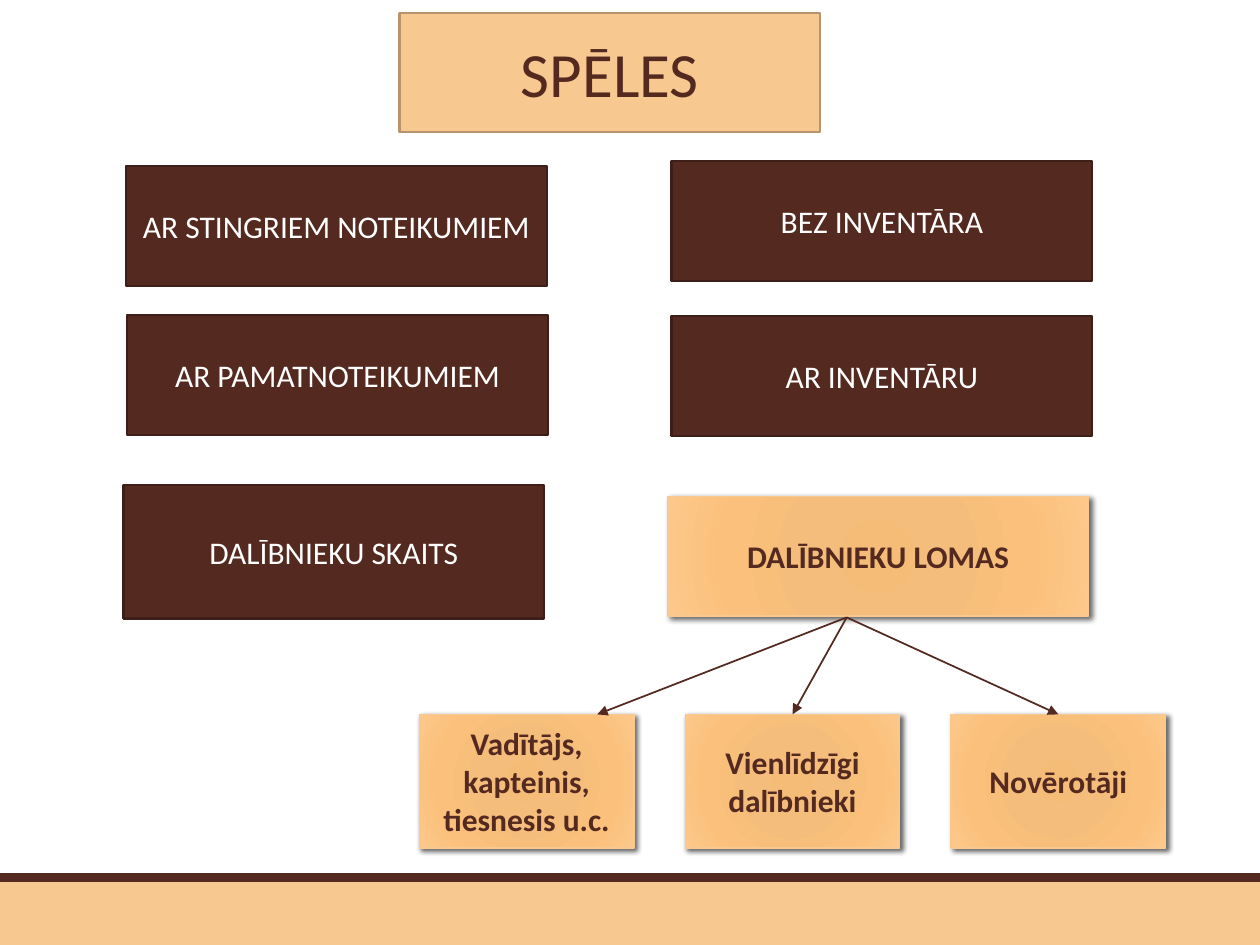
import pptx
import pptx.dml.color
import pptx.enum.shapes
import pptx.enum.text
import pptx.oxml
import pptx.oxml.ns
import pptx.util
from dataclasses import dataclass

EMU_PER_PX = 9144  # 100 px to the inch


@dataclass(frozen=True)
class Theme:
    font: str = "Calibri"
    title_size: int = 36
    body_size: int = 18
    sand: str = "F7C890"
    sand_edge: str = "B7946B"
    brown: str = "542920"
    brown_edge: str = "3E1E18"
    white: str = "FFFFFF"
    glow: tuple = ((0, "F5BC78"), (34, "F5BD7B"), (70, "FBC07B"), (100, "FCC88B"))


THEME = Theme()
TITLE_STYLE = {"fill": THEME.sand, "edge": THEME.sand_edge, "width": 1.25,
               "color": THEME.brown, "size": THEME.title_size, "bold": False}
TYPE_STYLE = {"fill": THEME.brown, "edge": THEME.brown_edge, "width": 1.25,
              "color": THEME.white, "size": THEME.body_size, "bold": False}
ROLE_STYLE = {"fill": THEME.glow, "edge": THEME.sand, "width": 1,
              "color": THEME.brown, "size": THEME.body_size, "bold": True}


def px(length):
    return pptx.util.Emu(length * EMU_PER_PX)


def rgb(value):
    return pptx.dml.color.RGBColor.from_string(value)


def set_attributes(target, values):
    for name, value in values.items():
        setattr(target, name, value)


def drawing_xml(tag, body, attributes=""):
    namespaces = pptx.oxml.ns.nsdecls("a")
    return pptx.oxml.parse_xml(f"<a:{tag} {namespaces} {attributes}>{body}</a:{tag}>")


def fill_solid(shape, color):
    shape.fill.solid()
    shape.fill.fore_color.rgb = rgb(color)


def fill_glow(shape, stops):
    """Give the shape a radial gradient and a soft shadow."""
    stop_xml = "".join(f'<a:gs pos="{position * 1000}"><a:srgbClr val="{color}"/></a:gs>'
                       for position, color in stops)
    gradient = drawing_xml("gradFill", f'<a:gsLst>{stop_xml}</a:gsLst><a:path path="circle">'
                           '<a:fillToRect l="100000" t="100000" r="100000" b="100000"/></a:path>',
                           'rotWithShape="1"')
    shadow = drawing_xml("outerShdw", '<a:srgbClr val="000000"><a:alpha val="60000"/></a:srgbClr>',
                         'blurRad="38100" dist="25400" dir="2700000" rotWithShape="0"')
    shape.fill.background()
    properties = shape.element.spPr
    properties.replace(properties.find(pptx.oxml.ns.qn("a:noFill")), gradient)
    properties.find(pptx.oxml.ns.qn("a:effectLst")).append(shadow)


def add_rectangle(slide, box):
    shape = slide.shapes.add_shape(pptx.enum.shapes.MSO_SHAPE.RECTANGLE, *map(px, box))
    shape.shadow.inherit = False
    return shape


def style_box(shape, text, style):
    """Fill, outline and label one box."""
    if isinstance(style["fill"], str):
        fill_solid(shape, style["fill"])
    else:
        fill_glow(shape, style["fill"])
    shape.line.color.rgb = rgb(style["edge"])
    shape.line.width = pptx.util.Pt(style["width"])
    frame = shape.text_frame
    set_attributes(frame, {"text": text, "word_wrap": True,
                           "auto_size": pptx.enum.text.MSO_AUTO_SIZE.NONE,
                           "vertical_anchor": pptx.enum.text.MSO_ANCHOR.MIDDLE})
    paragraph = frame.paragraphs[0]
    paragraph.alignment = pptx.enum.text.PP_ALIGN.CENTER
    set_attributes(paragraph.font, {"name": THEME.font, "bold": style["bold"],
                                    "size": pptx.util.Pt(style["size"])})
    paragraph.font.color.rgb = rgb(style["color"])


def add_arrow(slide, start, end):
    arrow = slide.shapes.add_connector(pptx.enum.shapes.MSO_CONNECTOR.STRAIGHT,
                                       *map(px, start + end))
    arrow.line.color.rgb = rgb(THEME.brown)
    arrow.line.width = pptx.util.Pt(1)
    arrow.line._get_or_add_ln().append(drawing_xml("tailEnd", "", 'type="triangle"'))
    arrow._element.spPr.append(drawing_xml("effectLst", ""))


def add_footer(slide, box):
    """Sand band with a thin brown rule along its top."""
    left, top, width, height = box
    rule = 7
    for part, color in (((left, top + rule, width, height - rule), THEME.sand),
                        ((left, top, width, rule), THEME.brown)):
        band = add_rectangle(slide, part)
        fill_solid(band, color)
        band.line.fill.background()


def place_title(slide, box, text):
    title = slide.shapes.title
    set_attributes(title, dict(zip(("left", "top", "width", "height"), map(px, box))))
    style_box(title, text, TITLE_STYLE)


def add_game_types(slide, box, entries):
    """Brown boxes, each offset from the corner of the region."""
    left, top, width = box
    for text, across, down, height in entries:
        shape = add_rectangle(slide, (left + across, top + down, width, height))
        style_box(shape, text, TYPE_STYLE)


def add_role_tree(slide, box, heading, roles):
    """A heading box with arrows to a row of evenly spaced roles."""
    left, top, width, height = box
    role_width, role_height = 170, 106
    step = (width - role_width) // (len(roles) - 1)
    role_top = top + height - role_height
    style_box(add_rectangle(slide, (left + 197, top, 334, 95)), heading, ROLE_STYLE)
    role_lefts = [left + index * step for index in range(len(roles))]
    for role_left, role in zip(role_lefts, roles):
        shape = add_rectangle(slide, (role_left, role_top, role_width, role_height))
        style_box(shape, role, ROLE_STYLE)
    # The first arrow lands right of the middle of its box
    for role_left, landing in zip(role_lefts, (141, 85, 85)):
        add_arrow(slide, (left + 339, top + 96), (role_left + landing, role_top))


def main():
    presentation = pptx.Presentation()
    set_attributes(presentation, {"slide_width": px(1000), "slide_height": px(750)})
    slide = presentation.slides.add_slide(presentation.slide_layouts.get_by_name("Title Only"))

    add_footer(slide, (0, 693, 1000, 57))
    place_title(slide, (317, 10, 334, 95), "SPĒLES")
    # Left column: rules and number of players
    add_game_types(slide, (98, 132, 334), (
        ("AR STINGRIEM NOTEIKUMIEM", 2, 0, 95),
        ("AR PAMATNOTEIKUMIEM", 3, 118, 95),
        ("DALĪBNIEKU SKAITS", 0, 253, 106)))
    # Right column: equipment
    add_game_types(slide, (533, 128, 334), (
        ("BEZ INVENTĀRA", 0, 0, 95),
        ("AR INVENTĀRU", 0, 123, 95)))
    add_role_tree(slide, (333, 394, 592, 279), "DALĪBNIEKU LOMAS", (
        "Vadītājs, kapteinis, tiesnesis u.c.", "Vienlīdzīgi dalībnieki", "Novērotāji"))
    presentation.save("out.pptx")


if __name__ == "__main__":
    main()
